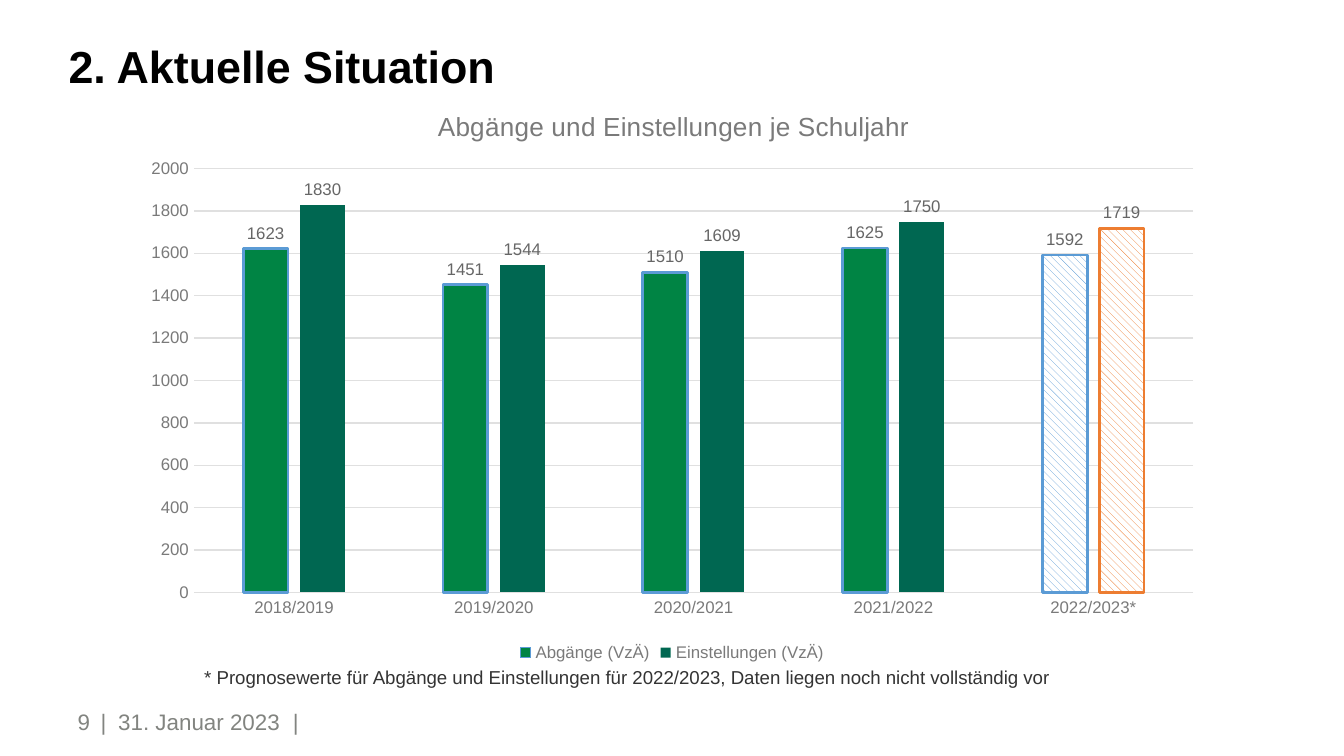
from lxml.etree import SubElement
from pptx import Presentation
from pptx.chart.data import CategoryChartData
from pptx.dml.color import RGBColor
from pptx.enum.chart import XL_CHART_TYPE as ChartType
from pptx.enum.chart import XL_LABEL_POSITION as LabelPosition
from pptx.enum.chart import XL_LEGEND_POSITION as LegendPosition
from pptx.enum.chart import XL_TICK_MARK as TickMark
from pptx.enum.dml import MSO_PATTERN as Pattern
from pptx.enum.text import MSO_ANCHOR as Anchor
from pptx.enum.text import MSO_AUTO_SIZE as AutoSize
from pptx.enum.text import PP_ALIGN as Align
from pptx.oxml.ns import qn
from pptx.util import Inches, Pt

COLORS = {
    "title": "000000", "text": "333333", "footer": "828480",
    "axis": "7A7A7A", "label": "666666", "grid": "E0E0E0",
    "leavers": "008444", "hires": "006751", "white": "FFFFFF",
    "leavers_edge": "5B9BD5", "hires_edge": "ED7D31",
}
YEARS = ["2018/2019", "2019/2020", "2020/2021", "2021/2022", "2022/2023*"]
LEAVERS = [1623, 1451, 1510, 1625, 1592]
HIRES = [1830, 1544, 1609, 1750, 1719]


def rgb(name):
    """Return the named colour."""
    return RGBColor.from_string(COLORS[name])


def style_font(font, size, color, bold=False):
    """Apply the deck's typeface with a size and colour."""
    font.name, font.size, font.bold = "Arial", Pt(size), bold
    font.color.rgb = rgb(color)


def style_line(line, color, width):
    """Give a line its colour and width."""
    line.color.rgb = rgb(color)
    line.width = Pt(width)


def fill_text(frame, text, size, color, bold=False, align=Align.LEFT,
              anchor=Anchor.MIDDLE, tabs=()):
    """Write one formatted paragraph into a frame without margins."""
    frame.word_wrap = True
    frame.auto_size = AutoSize.NONE
    frame.vertical_anchor = anchor
    frame.margin_left = frame.margin_right = 0
    frame.margin_top = frame.margin_bottom = 0
    paragraph = frame.paragraphs[0]
    paragraph.alignment = align
    if tabs:
        stops = SubElement(paragraph._p.get_or_add_pPr(), qn("a:tabLst"))
        for stop in tabs:
            SubElement(stops, qn("a:tab"), pos=str(Inches(stop)), algn="l")
    run = paragraph.add_run()
    run.text = text
    style_font(run.font, size, color, bold)


def add_title(slide, text):
    """Place the slide heading in the title placeholder."""
    heading = slide.shapes.title
    heading.left, heading.top = Inches(0.51), Inches(0.21)
    heading.width, heading.height = Inches(7.25), Inches(0.48)
    fill_text(heading.text_frame, text, 24, "title", True, anchor=Anchor.BOTTOM)


def add_text(slide, box, text, size, color, **options):
    """Add a text box at left, top, width, height."""
    note = slide.shapes.add_textbox(*map(Inches, box))
    fill_text(note.text_frame, text, size, color, **options)


def set_layout(parent, index, inner=False, **fractions):
    """Fix the position of a chart part as fractions of the chart."""
    for old in parent.findall(qn("c:layout")):
        parent.remove(old)
    layout = parent.makeelement(qn("c:layout"))
    parent.insert(index, layout)
    manual = SubElement(layout, qn("c:manualLayout"))
    settings = {"layoutTarget": "inner"} if inner else {}
    settings.update(xMode="edge", yMode="edge", **fractions)
    for tag, value in settings.items():
        SubElement(manual, qn(f"c:{tag}")).set("val", str(value))


def style_axes(chart):
    """Format the year axis, the value axis and its gridlines."""
    years, values = chart.category_axis, chart.value_axis
    for axis in (years, values):
        axis.major_tick_mark = axis.minor_tick_mark = TickMark.NONE
        style_font(axis.tick_labels.font, 9, "axis")
    style_line(years.format.line, "grid", 0.75)
    values.format.line.fill.background()
    values.minimum_scale, values.maximum_scale = 0, 2000
    values.major_unit = 200
    style_line(values.major_gridlines.format.line, "grid", 0.75)


def style_series(series, color, edge, outlined):
    """Colour a series, label it and hatch its forecast column."""
    series.format.fill.solid()
    series.format.fill.fore_color.rgb = rgb(color)
    if outlined:
        style_line(series.format.line, edge, 1.5)
    else:
        series.format.line.fill.background()
    forecast = series.points[len(YEARS) - 1].format
    forecast.fill.patterned()
    forecast.fill.pattern = Pattern.WIDE_DOWNWARD_DIAGONAL
    forecast.fill.fore_color.rgb = rgb(edge)
    forecast.fill.back_color.rgb = rgb("white")
    style_line(forecast.line, edge, 1.5)
    labels = series.data_labels
    labels.show_value = True
    labels.position = LabelPosition.OUTSIDE_END
    style_font(labels.font, 9, "label")


def add_staff_chart(slide):
    """Add the column chart of leavers and hires per school year."""
    data = CategoryChartData()
    data.categories = YEARS
    data.add_series("Abgänge (VzÄ)", LEAVERS)
    data.add_series("Einstellungen (VzÄ)", HIRES)
    box = map(Inches, (0.96, 0.65, 8.08, 4.32))
    chart = slide.shapes.add_chart(ChartType.COLUMN_CLUSTERED, *box, data).chart
    style_font(chart.font, 10, "text")

    chart.has_title = True
    heading = chart.chart_title.text_frame.paragraphs[0].add_run()
    heading.text = "Abgänge und Einstellungen je Schuljahr"
    style_font(heading.font, 14, "axis")
    set_layout(chart.chart_title._element, 1, x=0.28, y=0.03)

    chart.has_legend = True
    chart.legend.position = LegendPosition.BOTTOM
    chart.legend.include_in_layout = False
    style_font(chart.legend.font, 9, "axis")

    style_axes(chart)
    plot = chart.plots[0]
    plot.gap_width, plot.overlap = 219, -27
    plot.vary_by_categories = False
    leavers, hires = plot.series
    style_series(leavers, "leavers", "leavers_edge", True)
    style_series(hires, "hires", "hires_edge", False)
    plot_area = chart._chartSpace.chart.plotArea
    set_layout(plot_area, 0, inner=True, x=0.06, y=0.14, w=0.92, h=0.73)


def main():
    """Build and save the slide."""
    deck = Presentation()
    deck.slide_width = Inches(10)
    deck.slide_height = deck.slide_width * 9 // 16
    slide = deck.slides.add_slide(deck.slide_layouts[5])
    add_title(slide, "2. Aktuelle Situation")
    add_text(slide, (0.75, 5.11, 4.96, 0.52), "|\t31. Januar 2023\t|", 12,
             "footer", tabs=(0.13, 1.43))
    add_text(slide, (0, 5.11, 0.67, 0.52), "9", 12, "footer", align=Align.RIGHT)
    add_staff_chart(slide)
    add_text(slide, (1.52, 4.89, 8.2, 0.29),
             "* Prognosewerte für Abgänge und Einstellungen für 2022/2023, "
             "Daten liegen noch nicht vollständig vor", 10, "text")
    deck.save("out.pptx")


if __name__ == "__main__":
    main()
